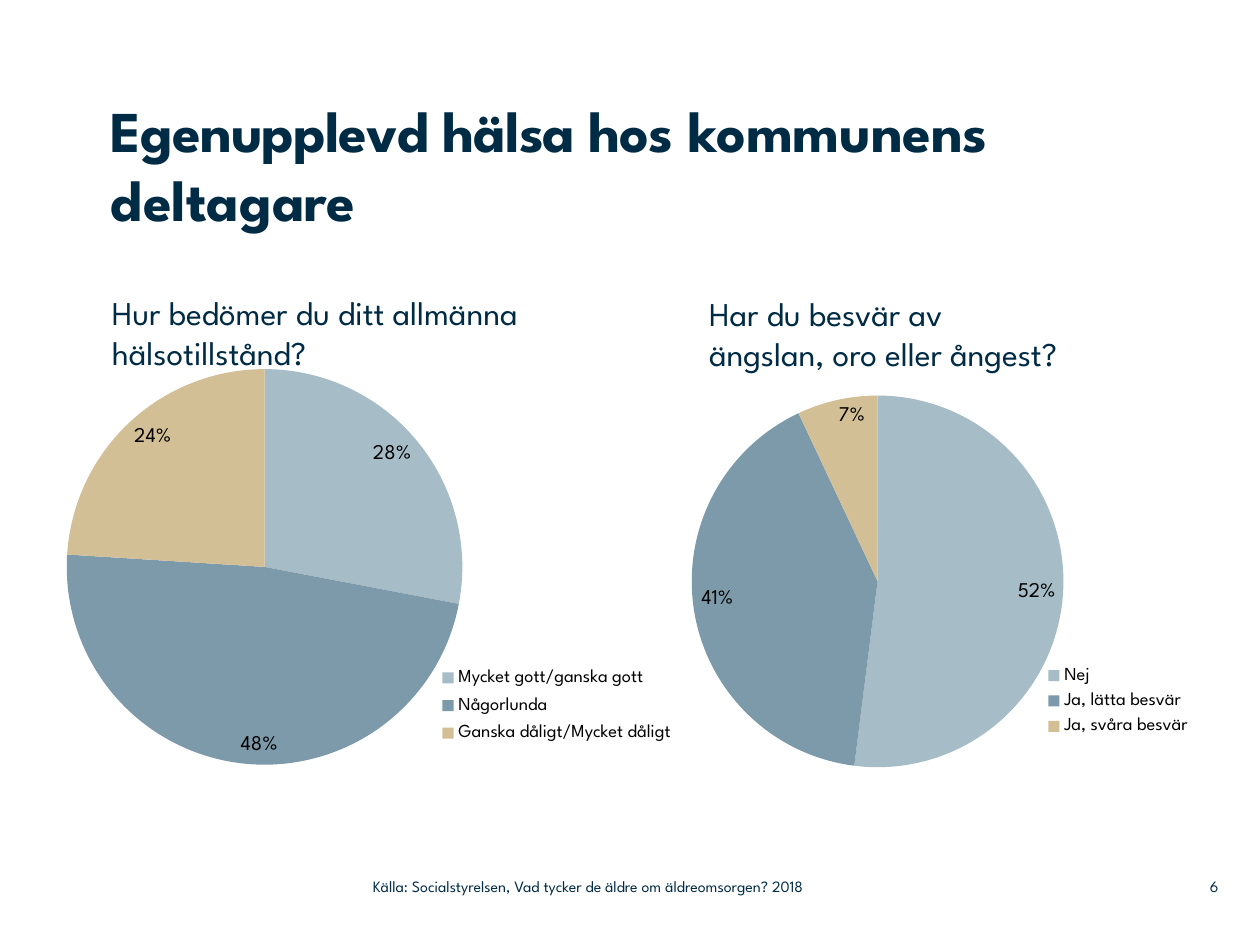
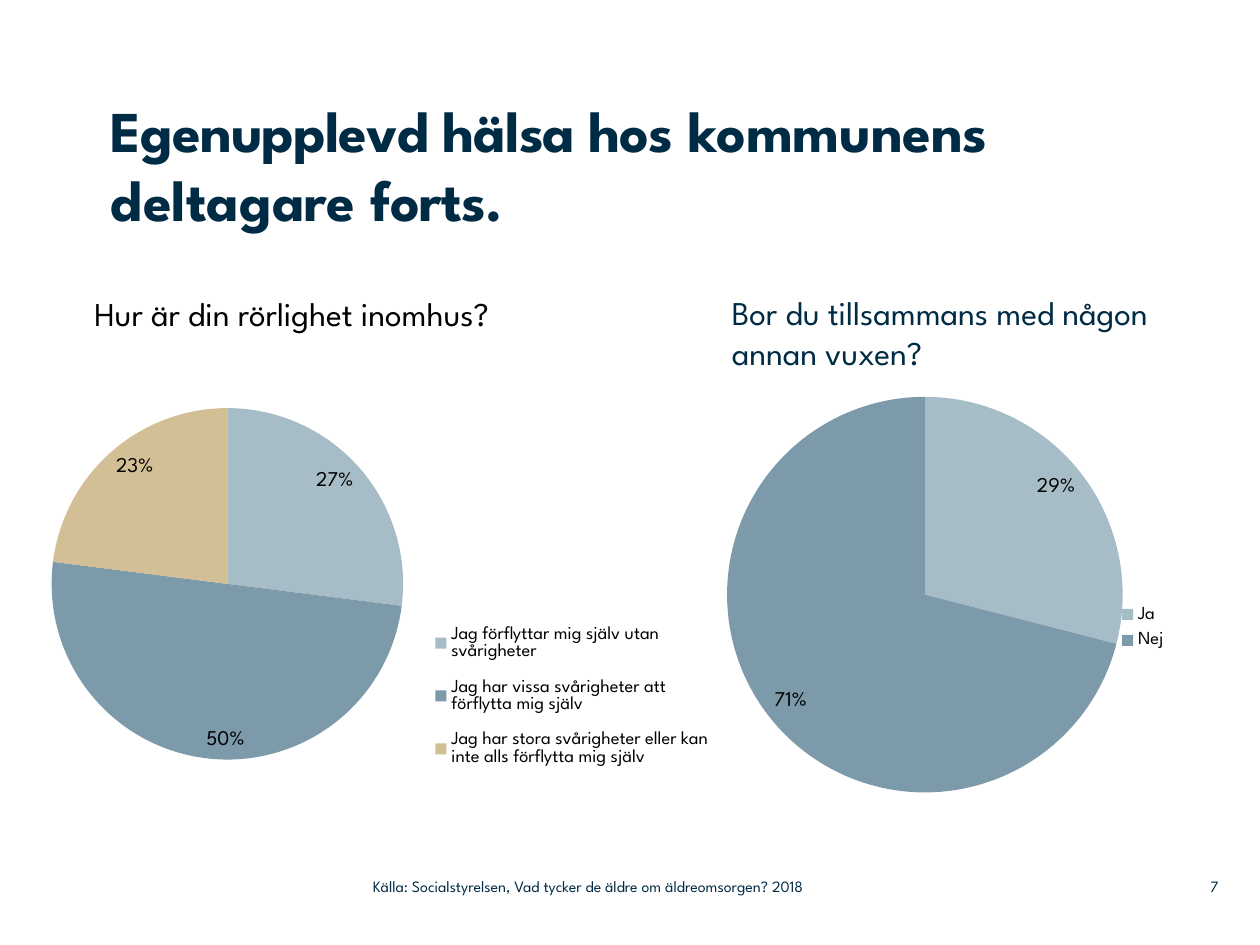
from lxml import etree
from pptx import Presentation
from pptx import util as u
from pptx.chart.data import CategoryChartData
from pptx.dml.color import RGBColor
from pptx.enum import chart as ch, text
from pptx.oxml.ns import qn

FONT = "League Spartan"
COLOURS = {"navy": "002B45", "black": "000000", "mist": "A6BCC6", "steel": "7D9AAA", "sand": "D3BF96"}
SLICES = ["mist", "steel", "sand"]
SOURCE = "Källa: Socialstyrelsen, Vad tycker de äldre om äldreomsorgen? 2018"
CHART_W, CHART_H = 5.42, 3.42

# Content: title runs are (text, letter spacing); places are in inches.
# pie is left, top, diameter; legend is left, top, width, height.
SLIDES = [
    {"number": "6", "title_width": 8.27,
     "title": [("Egenupplevd hälsa hos ", -50), ("kommunens deltagare", 0)],
     "questions": [
         {"lines": ["Hur bedömer du ditt allmänna hälsotillstånd?"],
          "colour": "navy", "box": (0.79, 2.27, 4.07, 0.74), "chart": (0.39, 2.79),
          "pie": (0.53, 2.93, 3.14), "legend": (3.46, 5.23, 1.92, 0.74),
          "answers": [("Mycket gott/ganska gott", 28), ("Någorlunda", 48),
                      ("Ganska dåligt/Mycket dåligt", 24)]},
         {"lines": ["Har du besvär av ", "ängslan, oro eller ångest?"],
          "colour": "navy", "box": (5.53, 2.28, 3.71, 0.74), "chart": (4.9, 2.81),
          "pie": (5.49, 3.14, 2.95), "legend": (8.25, 5.23, 1.25, 0.67),
          "answers": [("Nej", 52), ("Ja, lätta besvär", 41), ("Ja, svåra besvär", 7)]},
     ]},
    {"number": "7", "title_width": 8.02,
     "title": [("Egenupplevd hälsa hos ", -50), ("kommunens deltagare ", 0), ("forts.", -50)],
     "questions": [
         {"lines": ["Hur är din rörlighet inomhus?"],
          "colour": "black", "box": (0.65, 2.28, 4.07, 0.42), "chart": (0.28, 2.93),
          "pie": (0.41, 3.24, 2.79), "legend": (3.39, 4.82, 2.3, 1.41),
          "answers": [("Jag förflyttar mig själv utan svårigheter", 27),
                      ("Jag har vissa svårigheter att förflytta mig själv", 50),
                      ("Jag har stora svårigheter eller kan inte alls förflytta mig själv", 23)]},
         {"lines": ["Bor du tillsammans med någon annan vuxen?"],
          "colour": "navy", "box": (5.71, 2.27, 3.71, 0.74), "chart": (4.89, 3.02),
          "pie": (5.77, 3.15, 3.14), "legend": (8.84, 4.74, 0.46, 0.48),
          "answers": [("Ja", 29), ("Nej", 71)]},
     ]},
]


def rgb(name):
    return RGBColor.from_string(COLOURS[name])


def set_font(font, size, colour, bold=False):
    font.name, font.size, font.bold = FONT, u.Pt(size), bold
    font.color.rgb = rgb(colour)


def place(sp, box):
    sp.left, sp.top, sp.width, sp.height = map(u.Inches, box)


def no_margins(tf):
    tf.margin_left = tf.margin_top = tf.margin_right = tf.margin_bottom = 0


def add_title(s, runs, width):
    sp = s.shapes.title
    place(sp, (0.88, 0.75, width, 1.42))
    tf = sp.text_frame
    no_margins(tf)
    tf.word_wrap = True
    tf.auto_size = text.MSO_AUTO_SIZE.NONE
    tf.vertical_anchor = text.MSO_ANCHOR.TOP
    p = tf.paragraphs[0]
    p.alignment = text.PP_ALIGN.LEFT
    for words, spacing in runs:
        r = p.add_run()
        r.text = words
        set_font(r.font, 33, "navy", bold=True)
        r.font._element.set("spc", str(spacing))


def add_text(s, box, lines, size, colour):
    tf = s.shapes.add_textbox(*map(u.Inches, box)).text_frame
    tf.word_wrap = True
    p = tf.paragraphs[0]
    for i, line in enumerate(lines):
        if i:
            p.add_line_break()
        r = p.add_run()
        r.text = line
        set_font(r.font, size, colour)
    return tf


def add_footer(s, number):
    for words, left, width, align in [(SOURCE, 2.96, 4.43, text.PP_ALIGN.LEFT),
                                      (number, 9.2, 0.47, text.PP_ALIGN.RIGHT)]:
        tf = add_text(s, (left, 6.89, width, 0.29), [words], 9, "navy")
        no_margins(tf)
        tf.vertical_anchor = text.MSO_ANCHOR.MIDDLE
        tf.paragraphs[0].alignment = align


def set_layout(parent, index, chart_at, box, inner=False):
    """Fix a chart part at a slide position, as shares of the chart frame."""
    for old in parent.findall(qn("c:layout")):
        parent.remove(old)
    layout = etree.Element(qn("c:layout"))
    manual = etree.SubElement(layout, qn("c:manualLayout"))
    x, y, w, h = box
    shares = [(x - chart_at[0]) / CHART_W, (y - chart_at[1]) / CHART_H, w / CHART_W, h / CHART_H]
    settings = [("layoutTarget", "inner")] if inner else []
    settings += [("xMode", "edge"), ("yMode", "edge")]
    settings += [(tag, f"{share:.4f}") for tag, share in zip("xywh", shares)]
    for tag, value in settings:
        etree.SubElement(manual, qn("c:" + tag)).set("val", value)
    parent.insert(index, layout)


def add_pie(s, q):
    data = CategoryChartData()
    data.categories = [answer for answer, _ in q["answers"]]
    data.add_series("Series 1", [value for _, value in q["answers"]])
    frame = s.shapes.add_chart(ch.XL_CHART_TYPE.PIE, *map(u.Inches, (*q["chart"], CHART_W, CHART_H)), data)
    chart = frame.chart
    chart.has_title = False
    set_font(chart.font, 10, "black")

    # Slices and percentages
    plot = chart.plots[0]
    plot.vary_by_categories = True
    for i in range(len(q["answers"])):
        fill = plot.series[0].points[i].format.fill
        fill.solid()
        fill.fore_color.rgb = rgb(SLICES[i])
    plot.has_data_labels = True
    labels = plot.data_labels
    labels.show_percentage, labels.show_value = True, False
    labels.number_format, labels.number_format_is_linked = "0%", False
    labels.position = ch.XL_LABEL_POSITION.INSIDE_END
    set_font(labels.font, 12, "black")

    # Legend
    chart.has_legend = True
    legend = chart.legend
    legend.position = ch.XL_LEGEND_POSITION.RIGHT
    legend.include_in_layout = False
    set_font(legend.font, 10.5, "black")

    # Fixed places, and a clear background since the frames overlap
    x, y, d = q["pie"]
    space = chart._chartSpace
    set_layout(space.find(".//" + qn("c:plotArea")), 0, q["chart"], (x, y, d, d), inner=True)
    set_layout(legend._element, 1, q["chart"], q["legend"])
    clear = etree.Element(qn("c:spPr"))
    etree.SubElement(clear, qn("a:noFill"))
    etree.SubElement(etree.SubElement(clear, qn("a:ln")), qn("a:noFill"))
    space.find(qn("c:chart")).addnext(clear)


def main():
    prs = Presentation()
    prs.slide_width, prs.slide_height = u.Inches(10), u.Inches(7.5)
    for content in SLIDES:
        s = prs.slides.add_slide(prs.slide_layouts[5])
        add_title(s, content["title"], content["title_width"])
        for q in content["questions"]:
            tf = add_text(s, q["box"], q["lines"], 19, q["colour"])
            tf.auto_size = text.MSO_AUTO_SIZE.SHAPE_TO_FIT_TEXT
        for q in content["questions"]:
            add_pie(s, q)
        add_footer(s, content["number"])
    prs.save("out.pptx")


if __name__ == "__main__":
    main()
